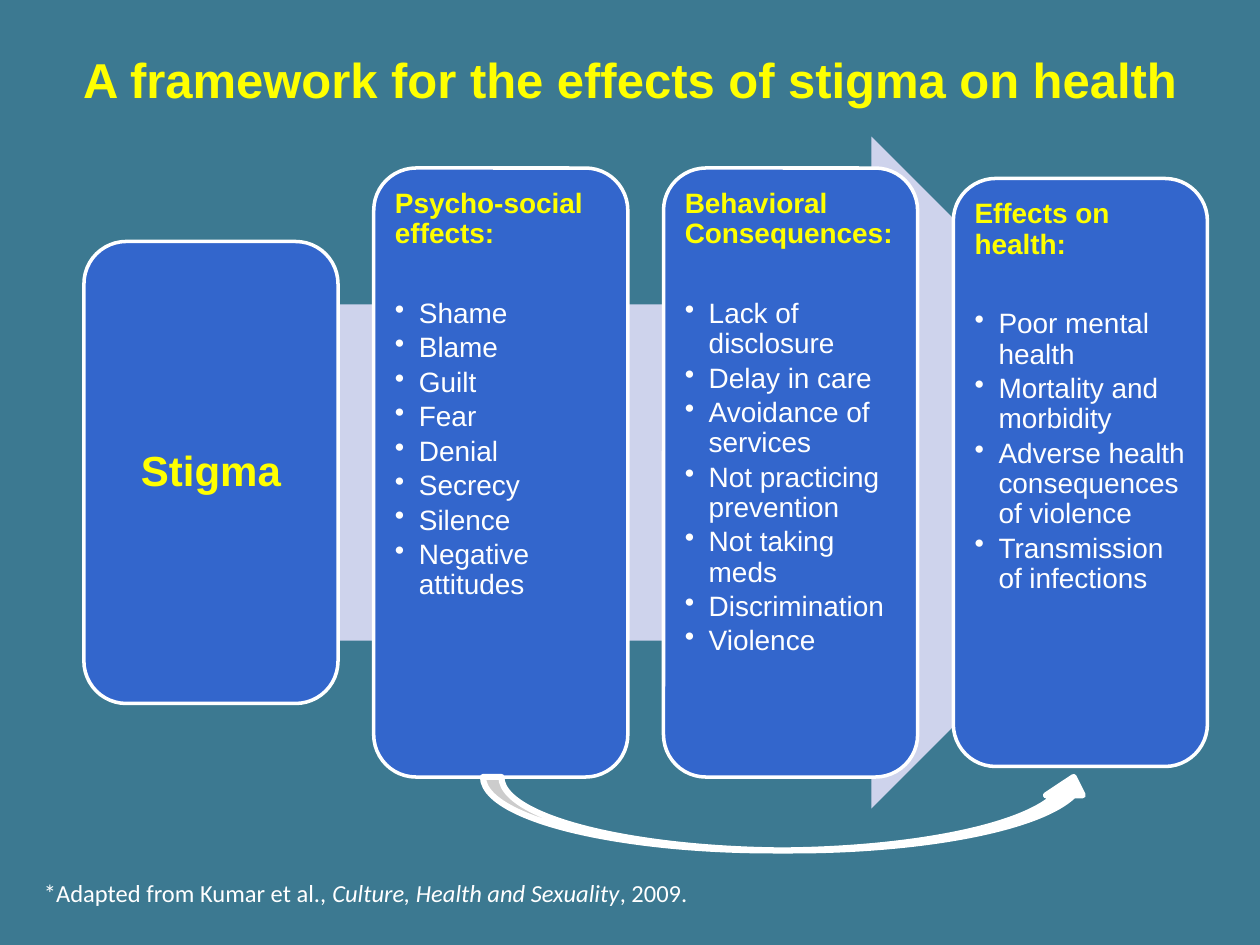
from dataclasses import dataclass

from lxml import etree
from pptx import Presentation
from pptx.dml.color import RGBColor
from pptx.enum.shapes import MSO_SHAPE
from pptx.enum.text import MSO_ANCHOR, PP_ALIGN
from pptx.oxml.ns import qn
from pptx.util import Inches, Pt

ROUNDED = MSO_SHAPE.ROUNDED_RECTANGLE
RIGHT_ARROW = MSO_SHAPE.RIGHT_ARROW
CURVED_ARROW = MSO_SHAPE.CURVED_UP_ARROW
TOP, MIDDLE = MSO_ANCHOR.TOP, MSO_ANCHOR.MIDDLE
LEFT, CENTER = PP_ALIGN.LEFT, PP_ALIGN.CENTER

BACKGROUND, PALE, BLUE = "3C7991", "CED3EC", "3366CC"
YELLOW, WHITE = "FFFF00", "FFFFFF"

# The slide is a grid of 120 columns by 90 rows of square cells
GRID_COLUMNS, GRID_ROWS = 120, 90
CELL = Inches(10) / GRID_COLUMNS
MIDDLE_ROW = 45
FLOW_LEFT, FLOW_WIDTH, FLOW_HEIGHT = 8, 107, 64
CARD_WIDTH = 24.2
BULLET_INDENT = Inches(0.19)


@dataclass(frozen=True)
class Box:
    column: float
    row: float
    columns: float
    rows: float

    def lengths(self) -> list[int]:
        return [round(cells * CELL) for cells in
                (self.column, self.row, self.columns, self.rows)]


@dataclass(frozen=True)
class Card:
    heading: str
    rows: float
    items: tuple[str, ...] = ()


CARDS = (
    Card("Stigma", 44),
    Card("Psycho-social effects:", 58,
         ("Shame", "Blame", "Guilt", "Fear", "Denial", "Secrecy", "Silence",
          "Negative attitudes")),
    Card("Behavioral Consequences:", 58,
         ("Lack of disclosure", "Delay in care", "Avoidance of services",
          "Not practicing prevention", "Not taking meds", "Discrimination",
          "Violence")),
    Card("Effects on health:", 56,
         ("Poor mental health", "Mortality and morbidity",
          "Adverse health consequences of violence",
          "Transmission of infections")),
)


def color(value: str) -> RGBColor:
    return RGBColor.from_string(value)


def format_run(run, size: float, fill: str, name="Arial", bold=False, italic=False) -> None:
    font = run.font
    font.name, font.size, font.bold, font.italic = name, Pt(size), bold, italic
    font.color.rgb = color(fill)


def add_bullet(paragraph) -> None:
    properties = paragraph._p.get_or_add_pPr()
    properties.set("marL", str(BULLET_INDENT))
    properties.set("indent", str(-BULLET_INDENT))
    etree.SubElement(properties, qn("a:buChar")).set("char", "•")


def draw_shape(slide, preset, box: Box, fill: str, line: str = "", width: float = 0):
    shape = slide.shapes.add_shape(preset, *box.lengths())
    shape.shadow.inherit = False
    shape.fill.solid()
    shape.fill.fore_color.rgb = color(fill)
    if line:
        shape.line.color.rgb = color(line)
        shape.line.width = Pt(width)
    else:
        shape.line.fill.background()
    return shape


def draw_text(slide, box: Box, anchor):
    text_frame = slide.shapes.add_textbox(*box.lengths()).text_frame
    text_frame.word_wrap = True
    text_frame.vertical_anchor = anchor
    return text_frame


def draw_card(slide, card: Card, column: float) -> None:
    box = Box(column, MIDDLE_ROW - card.rows / 2, CARD_WIDTH, card.rows)
    text_frame = draw_shape(slide, ROUNDED, box, BLUE, WHITE, 2).text_frame
    text_frame.word_wrap = True
    text_frame.vertical_anchor = TOP if card.items else MIDDLE
    margin = Inches(0.07 if card.items else 0.1)
    text_frame.margin_left = text_frame.margin_right = margin
    text_frame.margin_top = text_frame.margin_bottom = margin

    text_frame.text = "\n".join((card.heading, *card.items))
    heading, *items = text_frame.paragraphs
    heading.alignment = LEFT if items else CENTER
    heading.line_spacing = 0.9
    heading.space_after = Pt(28.4 if items else 8.4)
    format_run(heading.runs[0], 16 if items else 24, YELLOW, bold=True)
    for paragraph in items:
        paragraph.alignment = LEFT
        paragraph.line_spacing = 0.9
        paragraph.space_after = Pt(2.4)
        add_bullet(paragraph)
        format_run(paragraph.runs[0], 16, WHITE)


def main() -> None:
    presentation = Presentation()
    presentation.slide_width = round(GRID_COLUMNS * CELL)
    presentation.slide_height = round(GRID_ROWS * CELL)
    slide = presentation.slides.add_slide(presentation.slide_layouts[6])
    slide.background.fill.solid()
    slide.background.fill.fore_color.rgb = color(BACKGROUND)

    # Title
    title = draw_text(slide, Box(0, 0, GRID_COLUMNS, 15), MIDDLE)
    title.text = "A framework for the effects of stigma on health"
    title.paragraphs[0].alignment = CENTER
    format_run(title.paragraphs[0].runs[0], 28, YELLOW, bold=True)

    # Flow arrow with evenly spaced cards on top
    draw_shape(slide, RIGHT_ARROW,
               Box(FLOW_LEFT, MIDDLE_ROW - FLOW_HEIGHT / 2, FLOW_WIDTH, FLOW_HEIGHT), PALE)
    pitch = (FLOW_WIDTH - CARD_WIDTH) / (len(CARDS) - 1)
    for index, card in enumerate(CARDS):
        draw_card(slide, card, FLOW_LEFT + index * pitch)

    # Direct path from psycho-social effects to health
    draw_shape(slide, CURVED_ARROW, Box(46, 74, 58, 7), WHITE, WHITE, 3.5)

    # Citation
    citation = draw_text(slide, Box(3, 83, 105, 4.1), TOP).paragraphs[0]
    for text, italic in (("*Adapted from Kumar et al., ", False),
                         ("Culture, Health and Sexuality", True),
                         (", 2009.", False)):
        run = citation.add_run()
        run.text = text
        format_run(run, 14, WHITE, name="Calibri", italic=italic)

    presentation.save("out.pptx")


if __name__ == "__main__":
    main()
